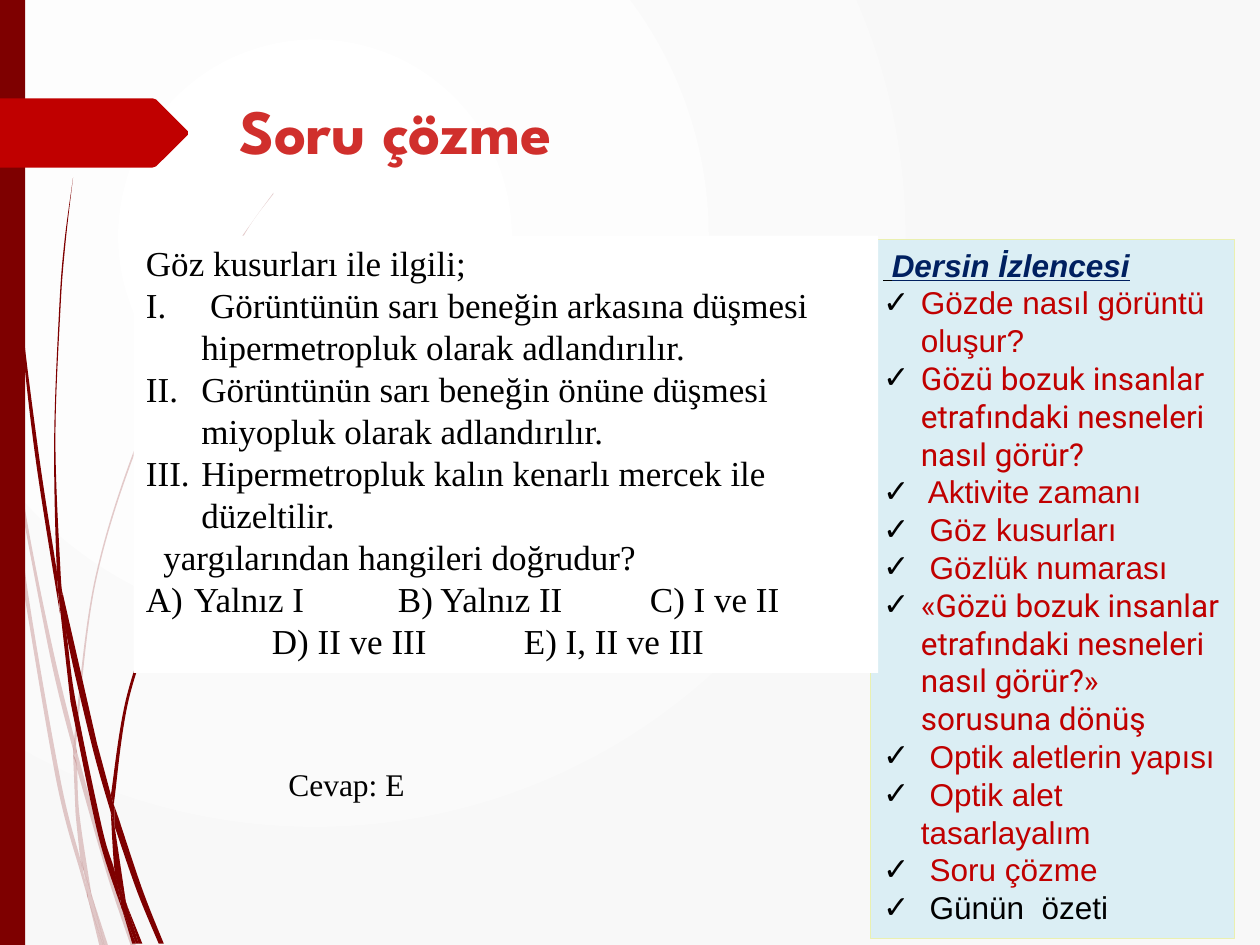
import pptx
import pptx.dml.color
import pptx.enum.shapes
import pptx.enum.text
import pptx.oxml.ns
import pptx.util
from lxml import etree

RGB = pptx.dml.color.RGBColor
WHITE = RGB(0xFF, 0xFF, 0xFF)
BLACK = RGB(0, 0, 0)
PAPER = RGB(0xF8, 0xF8, 0xF8)
MAROON = RGB(0x7E, 0, 0)
RED = RGB(0xC0, 0, 0)
TITLE_RED = RGB(0xD0, 0x2F, 0x2C)
NAVY = RGB(0, 0x20, 0x60)
PALE_BLUE = RGB(0xDB, 0xEE, 0xF4)
PALE_YELLOW = RGB(0xEA, 0xF0, 0xB0)
COLUMNS, ROWS = 1000, 750
CELL = pptx.util.Inches(0.01)

FAINT_WISPS = [
    ([(0, 282), (6, 322), (8, 350)], [(8, 350), (7, 344), (0, 299)]),
    ([(10, 345), (25, 433), (43, 520), (59, 586)],
     [(59, 599), (40, 522), (12, 376)]),
    ([(61, 596), (64, 607), (88, 692), (108, 751)],
     [(104, 751), (85, 694), (61, 610)]),
    ([(73, 711), (86, 751)], [(83, 751)]),
    ([(8, 350), (12, 376), (22, 469), (48, 619), (64, 683), (69, 707), (70, 714)],
     [(64, 693), (45, 621), (19, 470)]),
    ([(58, 599), (61, 608), (63, 646), (72, 706), (73, 711)],
     [(67, 692), (64, 683), (60, 646)]),
    ([(59, 584), (75, 461), (110, 348), (158, 244), (186, 197), (201, 175), (217, 153)],
     [(217, 154), (201, 175), (187, 198), (159, 245), (111, 349), (76, 462),
      (61, 584), (61, 596), (59, 586)]),
    ([(70, 714), (79, 751)], [(82, 751)]),
    ([(61, 608), (61, 610), (61, 596), (59, 586)], [(58, 599)]),
    ([(65, 683), (69, 707), (70, 714), (82, 751)],
     [(83, 751), (73, 711), (67, 692)]),
]
DARK_WISPS = [
    ([(2, 0), (3, 48), (5, 110), (14, 233), (27, 355), (46, 477), (47, 481)],
     [(45, 457), (45, 453), (30, 355), (15, 232), (6, 109), (4, 48), (3, 0)]),
    ([(50, 472), (53, 505), (73, 592), (88, 645)],
     [(88, 633), (88, 631), (77, 590)]),
    ([(91, 641), (94, 649), (113, 706), (130, 749)],
     [(126, 749), (109, 708), (91, 656)]),
    ([(47, 477), (53, 505), (60, 556), (81, 657), (91, 691), (96, 717), (97, 722)],
     [(92, 708), (77, 659), (56, 557)]),
    ([(50, 472), (48, 453), (44, 349), (48, 245), (52, 193), (58, 141)],
     [(58, 141), (51, 193), (47, 245), (43, 349), (45, 449), (49, 472)]),
    ([(101, 719), (110, 749)], [(113, 749)]),
    ([(45, 449), (45, 453), (47, 477), (53, 505)], [(50, 472), (49, 472)]),
    ([(88, 631), (101, 551), (129, 474), (168, 405), (191, 373), (203, 358), (215, 344)],
     [(216, 344), (203, 359), (191, 374), (169, 406), (131, 476), (103, 552),
      (91, 633), (91, 641)]),
    ([(97, 722), (105, 749)], [(108, 749)]),
    ([(88, 645), (91, 691), (96, 706), (101, 719)],
     [(100, 716), (91, 656), (90, 651)]),
    ([(88, 645), (90, 651), (91, 656)], [(91, 641), (88, 631)]),
    ([(91, 691), (96, 717), (97, 722), (108, 749)],
     [(110, 749), (101, 719), (96, 706)]),
]
ARROW = [(0, 78), (121, 78), (124, 79), (149, 104), (149, 107), (124, 132),
         (121, 133), (0, 133)]
TOPICS = [
    ("Gözde nasıl görüntü oluşur?", "Arial", RED),
    ("Gözü bozuk insanlar etrafındaki nesneleri nasıl görür?", "Roboto", RED),
    (" Aktivite zamanı", "Arial", RED),
    (" Göz kusurları", "Arial", RED),
    (" Gözlük numarası", "Arial", RED),
    ("«Gözü bozuk insanlar etrafındaki nesneleri nasıl görür?» sorusuna dönüş",
     "Roboto", RED),
    (" Optik aletlerin yapısı", "Arial", RED),
    (" Optik alet tasarlayalım", "Arial", RED),
    (" Soru çözme", "Arial", RED),
    (" Günün  özeti", "Arial", BLACK),
]
ROMAN = ("romanUcPeriod", 0.44)
LETTER = ("alphaUcParenR", 0.38)
QUESTION = [
    ("Göz kusurları ile ilgili;", None),
    (" Görüntünün sarı beneğin arkasına düşmesi hipermetropluk olarak adlandırılır.",
     ROMAN),
    ("Görüntünün sarı beneğin önüne düşmesi miyopluk olarak adlandırılır.", ROMAN),
    ("Hipermetropluk kalın kenarlı mercek ile düzeltilir.", ROMAN),
    ("  yargılarından hangileri doğrudur?", None),
    ("Yalnız I\tB) Yalnız II\tC) I ve II", LETTER),
    ("\tD) II ve III\tE) I, II ve III", None),
]


def add_element(parent, tag, **attributes):
    return etree.SubElement(parent, pptx.oxml.ns.qn(tag), attributes)


def paint(shape, color, line=None):
    shape.shadow.inherit = False
    shape.fill.solid()
    shape.fill.fore_color.rgb = color
    if line is None:
        shape.line.fill.background()
    else:
        shape.line.color.rgb = line
        shape.line.width = pptx.util.Pt(0.75)


def paint_background(page):
    fill = page.background.fill
    fill.gradient()
    for stop, color in zip(fill.gradient_stops, (WHITE, PAPER)):
        stop.color.rgb = color
    gradient = page._element.find(".//" + pptx.oxml.ns.qn("a:gradFill"))
    gradient.remove(gradient.find(pptx.oxml.ns.qn("a:lin")))
    circle = add_element(gradient, "a:path", path="circle")
    add_element(circle, "a:fillToRect", l="50000", t="50000", r="100000", b="100000")


def add_outline(shapes, points, color):
    corners = [(x * CELL, y * CELL) for x, y in points]
    builder = shapes.build_freeform(*corners[0])
    builder.add_line_segments(corners[1:], close=True)
    shape = builder.convert_to_shape()
    paint(shape, color)
    return shape


def bend_edge(lines, points, origin):
    ends = [points[0], *points, points[-1]]
    for line, a, b, c, d in zip(lines, ends, ends[1:], ends[2:], ends[3:]):
        line.tag = pptx.oxml.ns.qn("a:cubicBezTo")
        handles = [[q + (r - p) / 6 for p, q, r in zip(a, b, c)],
                   [r - (s - q) / 6 for q, r, s in zip(b, c, d)]]
        for place, handle in enumerate(handles):
            x, y = (round(value * CELL - start) for value, start in zip(handle, origin))
            point = add_element(line, "a:pt", x=str(x), y=str(y))
            line.insert(place, point)


def add_wisps(page, wisps, opacity=100):
    group = page.shapes.add_group_shape()
    for outward, back in wisps:
        shape = add_outline(group.shapes, outward + back, MAROON)
        lines = shape._element.findall(".//" + pptx.oxml.ns.qn("a:lnTo"))
        origin = [min(values) * CELL for values in zip(*outward, *back)]
        bend_edge(lines[:len(outward) - 1], outward, origin)
        bend_edge(lines[len(outward):], back, origin)
        if opacity < 100:
            tint = shape._element.find(".//" + pptx.oxml.ns.qn("a:srgbClr"))
            add_element(tint, "a:alpha", val=str(opacity * 1000))


def add_panel(page, area, color, line=None):
    kind = pptx.enum.shapes.MSO_SHAPE.RECTANGLE
    shape = page.shapes.add_shape(kind, *(CELL * length for length in area))
    paint(shape, color, line)
    shape.text_frame.vertical_anchor = pptx.enum.text.MSO_ANCHOR.TOP
    return shape


def add_label(page, area, text, size, font, color, bold=False):
    box = page.shapes.add_textbox(*(CELL * length for length in area))
    box.text_frame.word_wrap = True
    box.text_frame.text = text
    style(box.text_frame.paragraphs[0].runs[0], size, font, color, bold)


def style(span, size, font, color, bold=False):
    span.font.size = pptx.util.Pt(size)
    span.font.name = font
    span.font.color.rgb = color
    span.font.bold = bold


def add_para(frame, text, size, font, color, first=False):
    para = frame.paragraphs[0] if first else frame.add_paragraph()
    para.text = text
    para.alignment = pptx.enum.text.PP_ALIGN.LEFT
    para._p.get_or_add_pPr().set("defTabSz", str(pptx.util.Inches(1)))
    style(para.runs[0], size, font, color)
    return para


def indent(para, inches):
    margin = pptx.util.Inches(inches)
    properties = para._p.get_or_add_pPr()
    properties.set("marL", str(margin))
    properties.set("indent", str(-margin))
    return properties


def add_agenda(page):
    frame = add_panel(page, (691, 190, 289, 555), PALE_BLUE, PALE_YELLOW).text_frame
    heading = add_para(frame, " ", 18, "Arial", BLACK, first=True)
    span = heading.add_run()
    span.text = "Dersin İzlencesi"
    style(span, 18, "Arial", NAVY, bold=True)
    span.font.italic = True
    for run in heading.runs:
        run.font.underline = True
    for text, font, color in TOPICS:
        properties = indent(add_para(frame, text, 18, font, color), 0.3)
        tint = add_element(properties, "a:buClr")
        add_element(tint, "a:srgbClr", val=str(BLACK))
        add_element(properties, "a:buFont", typeface="Arial")
        add_element(properties, "a:buChar", char="✓")


def add_question(page):
    frame = add_panel(page, (106, 187, 591, 347), WHITE).text_frame
    for number, (text, numbering) in enumerate(QUESTION):
        para = add_para(frame, text, 20, "Times New Roman", BLACK, first=number == 0)
        if numbering:
            scheme, margin = numbering
            add_element(indent(para, margin), "a:buAutoNum", type=scheme)


def main():
    deck = pptx.Presentation()
    deck.slide_width, deck.slide_height = COLUMNS * CELL, ROWS * CELL
    page = deck.slides.add_slide(deck.slide_layouts[6])
    paint_background(page)
    add_wisps(page, FAINT_WISPS, opacity=20)
    add_wisps(page, DARK_WISPS)
    add_panel(page, (0, 0, 20, ROWS), MAROON)
    add_outline(page.shapes, ARROW, RED)
    add_label(page, (180, 68, 754, 140), "Soru çözme", 36, "League Spartan",
              TITLE_RED, bold=True)
    add_agenda(page)
    add_question(page)
    add_label(page, (219, 602, 188, 40), "Cevap: E", 18, "Times New Roman", BLACK)
    deck.save("out.pptx")


if __name__ == "__main__":
    main()
